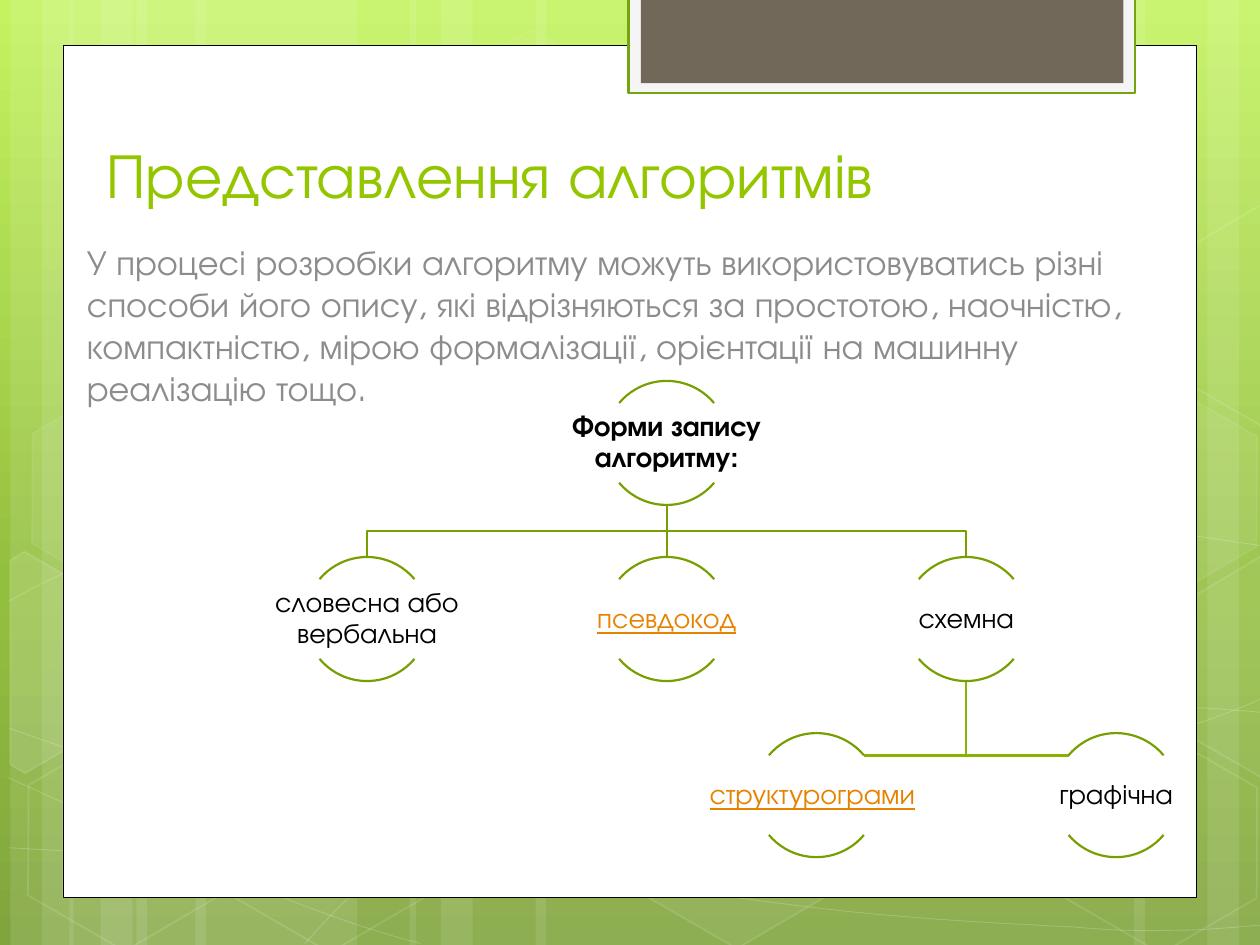
from copy import deepcopy
from math import cos, radians

from lxml import etree
from pptx import Presentation
from pptx.dml.color import RGBColor
from pptx.enum.shapes import MSO_SHAPE
from pptx.enum.text import MSO_ANCHOR, PP_ALIGN
from pptx.oxml.ns import qn
from pptx.util import Cm, Pt

RECT, HEXAGON, ARC = MSO_SHAPE.RECTANGLE, MSO_SHAPE.HEXAGON, MSO_SHAPE.ARC
TOP, MIDDLE, BOTTOM = MSO_ANCHOR.TOP, MSO_ANCHOR.MIDDLE, MSO_ANCHOR.BOTTOM
LEFT, CENTER = PP_ALIGN.LEFT, PP_ALIGN.CENTER

FONT = "TeX Gyre Adventor"
WHITE = RGBColor(0xFF, 0xFF, 0xFF)
BLACK = RGBColor(0, 0, 0)
TITLE_GREEN = RGBColor(0x94, 0xC6, 0x00)
TREE_GREEN = RGBColor(0x77, 0x9F, 0x00)
LEAF_GREEN = RGBColor(0x86, 0xB4, 0x00)
FRAME_GREEN = RGBColor(0x74, 0xA5, 0x10)
FRAME_GREY = RGBColor(0xF5, 0xF5, 0xF5)
TAB_BROWN = RGBColor(0x71, 0x68, 0x5A)
TEXT_GREY = RGBColor(0x8C, 0x8C, 0x8C)
LINK_ORANGE = RGBColor(0xE6, 0x82, 0x00)
BACKDROP = [(0, RGBColor(0xC3, 0xF3, 0x5F)), (0.62, RGBColor(0x93, 0xBF, 0x3F)),
            (1, RGBColor(0x81, 0xA5, 0x3E))]

TITLE = "Представлення алгоритмів"
BODY = ("У процесі розробки алгоритму можуть використовуватись різні способи його опису, "
        "які відрізняються за простотою, наочністю, компактністю, мірою формалізації, "
        "орієнтації на машинну реалізацію тощо.")

# All lengths below are centimetres.
SLIDE_W, SLIDE_H = 25.4, 19.05
STRIPES = [  # left, width
    (2.75, 4.45), (0.21, 1.27), (0.85, 2.12), (3.94, 4.45), (1.4, 1.27), (2.03, 2.12),
    (18.63, 4.45), (24.34, 1.27), (22.86, 2.12), (10.8, 7.83), (8.26, 1.27), (8.89, 2.12)]
CURVES = [  # start, then two controls and an end for every Bezier piece
    [(0.18, 17.09), (1.55, 17.17), (2.92, 17.25), (4.83, 17.22), (6.73, 17.2),
     (9.09, 17.15), (11.63, 16.89), (14.17, 16.64), (17.78, 16.15), (20.12, 15.67),
     (22.43, 15.19), (24.82, 14.43), (25.58, 14)],
    [(0.18, 12.12), (0.91, 11.71), (1.65, 11.33), (3.07, 10.95), (4.52, 10.57),
     (6.58, 10.01), (8.81, 9.83), (11.07, 9.65), (13.82, 9.63), (16.61, 9.83),
     (19.41, 10.03), (24.05, 10.82), (25.58, 11.02)],
    [(0.15, 15.67), (3.23, 17.07), (6.27, 18.47), (8.48, 19.02)],
    [(0.18, 14.68), (0.97, 14.96), (1.78, 15.24), (3.25, 15.65), (4.72, 16.03),
     (6.93, 16.66), (9.07, 17.09), (11.18, 17.53), (13.84, 17.98), (15.95, 18.24),
     (18.06, 18.52), (20.32, 18.62), (21.67, 18.69), (22.99, 18.8), (23.34, 18.75),
     (24, 18.75), (24.66, 18.72), (25.12, 18.67), (25.58, 18.64)],
    [(6.15, 19.02), (6.6, 18.52), (7.06, 18.01), (7.67, 17.55), (8.28, 17.09),
     (9.14, 16.59), (9.86, 16.23), (10.57, 15.88), (11, 15.72), (11.94, 15.47),
     (12.85, 15.21), (14.55, 14.86), (15.44, 14.68), (16.36, 14.5), (16.48, 14.5),
     (17.27, 14.45), (18.06, 14.38), (19.3, 14.3), (20.17, 14.27), (21.06, 14.25),
     (22.5, 14.27), (22.5, 14.27), (23.07, 14.27), (23.64, 14.27), (24.21, 14.27),
     (24.66, 14.3), (25.1, 14.33), (25.32, 14.35), (25.55, 14.38), (25.48, 14.35),
     (25.55, 14.38)],
]
HEXAGONS = [  # left, top, fill opacity, line opacity in percent
    (8.48, 0.91, 4, 8), (12.62, 14.96, 6, 12), (0.28, 15.01, None, 12),
    (0.36, 7.92, 7, 8), (4.42, 15.04, None, 12), (19.13, 11.51, 10, 12),
    (21.18, 15.06, None, 12), (21.18, 7.98, 7, 8)]
HEXAGON_TURN = 30
LEFT_CUT = [(-1.75, -1.63), (-1.6, -1.93), (0.65, -1.93), (1.75, 0.02), (0.65, 1.93),
            (0.3, 1.93)]
RIGHT_CUT = [(-1.73, 0), (-0.65, -1.93), (-0.41, -1.93), (1.73, 1.75), (1.61, 1.93),
             (-0.63, 1.93)]
CUT_HEXAGONS = [  # centre, outline around it before turning, fill opacity
    (0.91, 13.59, LEFT_CUT, 10), (25.02, 13.21, RIGHT_CUT, 4), (25.02, 6.12, RIGHT_CUT, None)]
PANELS = [  # box, fill, line, line width
    ((1.27, 0.91, 22.86, 17.19), WHITE, BLACK, 0.5),
    ((12.67, -0.05, 10.21, 1.93), FRAME_GREY, FRAME_GREEN, 1.25),
    ((12.92, -0.05, 9.73, 1.73), TAB_BROWN, None, 0)]

LABEL_INSETS = {f"margin_{side}": Cm(0.03) for side in ("left", "top", "right", "bottom")}
NODES = [  # text, half columns from the root, row, format
    ("Форми запису алгоритму:", 0, 0, {"bold": True}),
    ("словесна або вербальна", -2, 1, {}),
    ("псевдокод", 0, 1, {"underline": True, "color": LINK_ORANGE}),
    ("схемна", 2, 1, {}),
    ("структурограми", 1, 2, {"underline": True, "color": LINK_ORANGE,
                              "frame": {**LABEL_INSETS, "margin_right": Cm(0.19)}}),
    ("графічна", 3, 2, {})]
ROOT_X, ROOT_Y, HALF_COLUMN, ROW = 13.44, 7.68, 3.02, 3.55
DIAMETER, LABEL_W, LABEL_H, STEM_W = 2.5, 5, 1.6, 0.25
ARCS = [(132, 192), (24, 84)]  # upper and lower bow, 40 degrees off level

deck = Presentation()
deck.slide_width, deck.slide_height = Cm(SLIDE_W), Cm(SLIDE_H)
page = deck.slides.add_slide(deck.slide_layouts[6])


def paint(shape, fill=None, line=None, width=1, fill_opacity=None, line_opacity=None):
    shape.shadow.inherit = False
    if fill is None:
        shape.fill.background()
    else:
        shape.fill.solid()
        shape.fill.fore_color.rgb = fill
    if line is None:
        shape.line.fill.background()
    else:
        shape.line.color.rgb = line
        shape.line.width = Pt(width)
    for where, opacity in (("", fill_opacity), ("a:ln/", line_opacity)):
        if opacity is not None:
            for color in shape.element.xpath(f"./p:spPr/{where}a:solidFill/a:srgbClr"):
                etree.SubElement(color, qn("a:alpha"), val=str(opacity * 1000))


def add_preset(kind, box, adjustments=(), **look):
    shape = page.shapes.add_shape(kind, *map(Cm, box))
    for index, value in enumerate(adjustments):
        shape.adjustments[index] = value
    paint(shape, **look)
    return shape


def add_outline(points, close=False, **look):
    start, *rest = [(Cm(x), Cm(y)) for x, y in points]
    builder = page.shapes.build_freeform(*start)
    builder.add_line_segments(rest, close=close)
    shape = builder.convert_to_shape()
    paint(shape, **look)
    return shape


def bend_segments(shape):
    """Turn every three line segments into one cubic Bezier piece."""
    segments = shape.element.xpath(".//a:lnTo")
    for first in range(0, len(segments), 3):
        piece = etree.Element(qn("a:cubicBezTo"))
        segments[first].addprevious(piece)
        for segment in segments[first:first + 3]:
            piece.append(segment[0])
            segment.getparent().remove(segment)


def widen_stem(shape, width):
    """Give an upright line a box of some width, with the line in its middle."""
    shape.left, shape.width = shape.left - width // 2, width
    shape.element.xpath(".//a:path")[0].set("w", str(width))
    for point in shape.element.xpath(".//a:pt"):
        point.set("x", str(width // 2))


def add_text(text, box, size, color, anchor=TOP, align=LEFT, spacing=1, frame=None, **font):
    box = page.shapes.add_textbox(*map(Cm, box))
    for name, value in {"word_wrap": True, "vertical_anchor": anchor, **(frame or {})}.items():
        setattr(box.text_frame, name, value)
    para = box.text_frame.paragraphs[0]
    para.alignment, para.line_spacing = align, spacing
    span = para.add_run()
    span.text = text
    for name, value in {"name": FONT, "size": Pt(size), **font}.items():
        setattr(span.font, name, value)
    span.font.color.rgb = color


def place(column, row):
    """Centre and top of a tree node."""
    return ROOT_X + column * HALF_COLUMN, ROOT_Y + row * ROW


# Background
backdrop = page.background.fill
backdrop.gradient()
backdrop.gradient_angle = 270
stop_list = page.element.xpath(".//a:gsLst")[0]
stop_list.append(deepcopy(stop_list[-1]))
for stop, (position, color) in zip(backdrop.gradient_stops, BACKDROP):
    stop.position, stop.color.rgb = position, color

for left, width in STRIPES:
    add_preset(RECT, (left, 0, width, SLIDE_H), fill=WHITE, fill_opacity=10)
for curve in CURVES:
    bend_segments(add_outline(curve, line=WHITE, width=0.5, line_opacity=20))
for left, top, opacity, line_opacity in HEXAGONS:
    hexagon = add_preset(HEXAGON, (left, top, 4.45, 3.86), (0.285, 1.155),
                         fill=WHITE if opacity else None, fill_opacity=opacity,
                         line=WHITE, line_opacity=line_opacity)
    hexagon.rotation = HEXAGON_TURN
for x, y, outline, opacity in CUT_HEXAGONS:
    hexagon = add_outline([(x + dx, y + dy) for dx, dy in outline], close=True,
                          fill=WHITE if opacity else None, fill_opacity=opacity,
                          line=WHITE, line_opacity=12)
    hexagon.rotation = HEXAGON_TURN
for box, fill, line, width in PANELS:
    add_preset(RECT, box, fill=fill, line=line, width=width)

# Title and body; the title sits one line above the bottom of its box
add_text(TITLE, (1.9, 2.13, 18.44, 3.78), 36, TITLE_GREEN, anchor=BOTTOM,
         frame={"margin_bottom": Cm(1.65)})
add_text(BODY, (1.5, 4.72, 22.2, 4.22), 20, TEXT_GREY)

# Tree links
bow_half = DIAMETER / 2 * cos(radians(40))
label_drop = (DIAMETER - LABEL_H) / 2
parent_x, parent_y = place(2, 1)
for column, side in ((3, -1), (1, 1)):
    child_x, child_y = place(column, 2)
    bend = child_y + label_drop
    add_outline([(parent_x, parent_y + DIAMETER), (parent_x, bend),
                 (child_x + side * bow_half, bend)], line=LEAF_GREEN, width=1.25)

root_bottom, child_top = ROOT_Y + DIAMETER, ROOT_Y + ROW
bend = (root_bottom + child_top) / 2
for column in (2, -2):
    child_x = place(column, 1)[0]
    add_outline([(ROOT_X, root_bottom), (ROOT_X, bend), (child_x, bend),
                 (child_x, child_top)], line=TREE_GREEN, width=1.25)
stem = add_outline([(ROOT_X, root_bottom), (ROOT_X, child_top)], line=TREE_GREEN, width=1.25)
widen_stem(stem, Cm(STEM_W))

# Tree nodes
for text, column, row, style in NODES:
    x, top = place(column, row)
    for angles in ARCS:
        add_preset(ARC, (x - DIAMETER / 2, top, DIAMETER, DIAMETER), angles,
                   line=TREE_GREEN, width=1.25)
    add_text(text, (x - LABEL_W / 2, top + label_drop, LABEL_W, LABEL_H), 16,
             anchor=MIDDLE, align=CENTER, spacing=0.9,
             **{"color": BLACK, "frame": LABEL_INSETS, **style})

deck.save("out.pptx")
